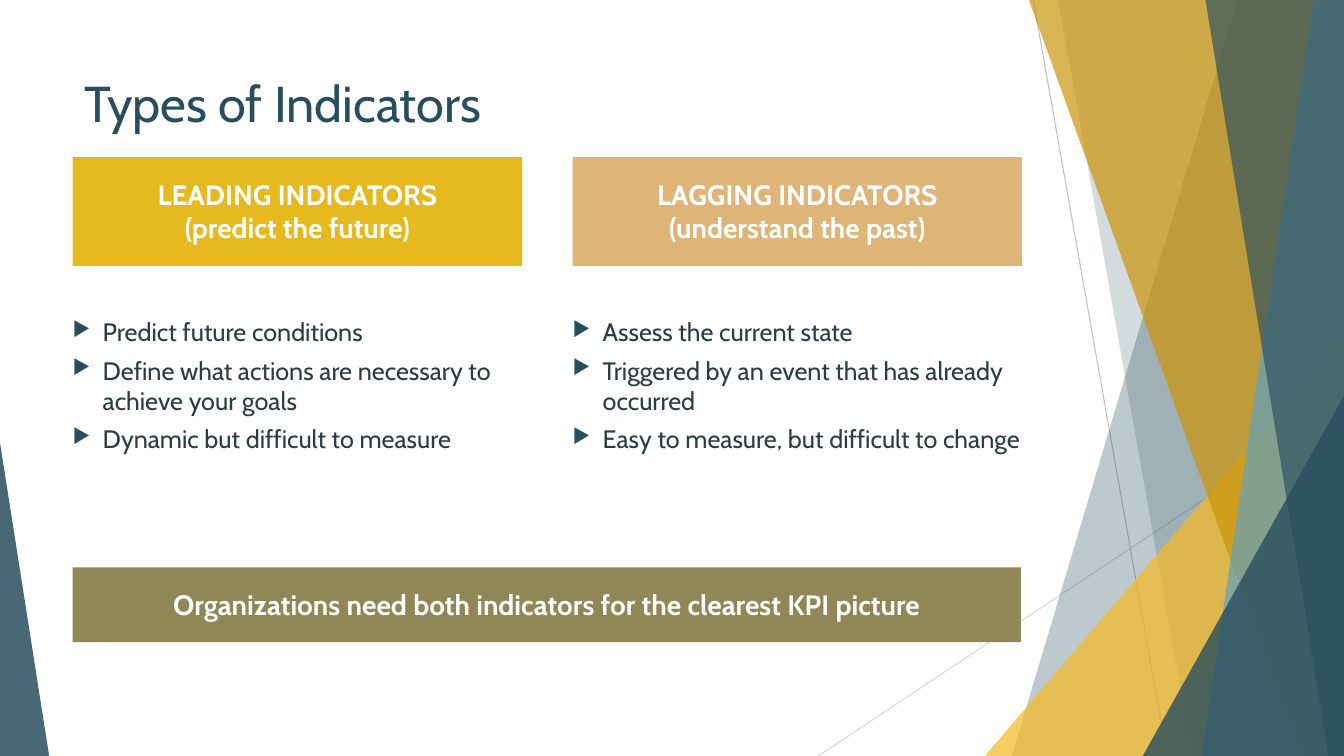
from dataclasses import dataclass
from typing import Any

import lxml.etree
import pptx
import pptx.dml.color
import pptx.enum.shapes
import pptx.enum.text
import pptx.oxml.ns
import pptx.util

Cm = pptx.util.Cm
Pt = pptx.util.Pt
RGB = pptx.dml.color.RGBColor
Kind = pptx.enum.shapes.MSO_SHAPE
Align = pptx.enum.text.PP_ALIGN
Anchor = pptx.enum.text.MSO_ANCHOR
qn = pptx.oxml.ns.qn

NAVY = RGB(0x28, 0x4E, 0x5E)
AMBER = RGB(0xF5, 0xBA, 0x26)
OCHRE = RGB(0xCB, 0x94, 0x09)
SKY = RGB(0x61, 0xA1, 0xBC)
GOLD = RGB(0xE6, 0xB9, 0x1E)
SAND = RGB(0xDE, 0xB4, 0x77)
OLIVE = RGB(0x91, 0x86, 0x55)
INK = RGB(0x2C, 0x3C, 0x43)
WHITE = RGB(0xFF, 0xFF, 0xFF)
GRAY = RGB(0xBF, 0xBF, 0xBF)
PALE = RGB(0xD9, 0xD9, 0xD9)

FONT = "Cabin"
WIDE, HIGH = 33.87, 19.05
LEFT = 1.83


@dataclass
class Line:
    start: tuple[float, float]
    end: tuple[float, float]
    color: RGB


@dataclass
class Panel:
    """A band that reaches from a slanted left edge to the slide's right edge."""
    top: float
    base: float
    color: RGB
    alpha: int


@dataclass
class Wedge:
    """A right triangle; tip is 0 for a left peak and 1 for a right peak."""
    x: float
    y: float
    wide: float
    tip: int
    color: RGB
    alpha: int


@dataclass
class Column:
    x: float
    color: RGB
    head: list[str]
    points: list[str]


LINES = [
    Line((26.04, 0), (29.41, HIGH), GRAY),
    Line((WIDE, 10.24), (20.62, HIGH), PALE),
]

# Back to front
FACETS = [
    Panel(31.19, 25.5, NAVY, 30),
    Panel(26.67, 30.05, NAVY, 20),
    Wedge(24.82, 8.46, 9.05, 1, AMBER, 72),
    Panel(25.93, 32.79, OCHRE, 70),
    Panel(33.1, 30.28, SKY, 70),
    Panel(30.38, 33.48, NAVY, 65),
    Wedge(28.8, 9.98, 5.07, 1, NAVY, 80),
    Wedge(0, 11.15, 1.24, 0, NAVY, 85),
]

COLUMNS = [
    Column(LEFT, GOLD, ["LEADING INDICATORS", "(predict the future)"], [
        "Predict future conditions",
        "Define what actions are necessary to achieve your goals",
        "Dynamic but difficult to measure",
    ]),
    Column(14.43, SAND, ["LAGGING INDICATORS", "(understand the past)"], [
        "Assess the current state",
        "Triggered by an event that has already occurred",
        "Easy to measure, but difficult to change",
    ]),
]


def paint(shape: Any, color: RGB, alpha: int = 100) -> None:
    shape.shadow.inherit = False
    shape.line.fill.background()
    shape.fill.solid()
    shape.fill.fore_color.rgb = color
    if alpha < 100:
        tint = shape.fill._xPr.find(".//" + qn("a:srgbClr"))
        lxml.etree.SubElement(tint, qn("a:alpha"), val=str(alpha * 1000))


def draw_line(shapes: Any, line: Line) -> None:
    link = shapes.add_connector(
        pptx.enum.shapes.MSO_CONNECTOR.STRAIGHT,
        *(Cm(v) for v in line.start + line.end))
    link.line.color.rgb = line.color
    link.line.width = Pt(0.75)
    lxml.etree.SubElement(link._element.spPr, qn("a:effectLst"))


def draw_panel(shapes: Any, panel: Panel) -> None:
    pen = shapes.build_freeform(Cm(panel.top), 0)
    ends = [(WIDE, 0), (WIDE, HIGH), (panel.base, HIGH)]
    pen.add_line_segments([(Cm(x), Cm(y)) for x, y in ends], close=True)
    paint(pen.convert_to_shape(), panel.color, panel.alpha)


def draw_wedge(shapes: Any, wedge: Wedge) -> None:
    shape = shapes.add_shape(Kind.ISOSCELES_TRIANGLE, Cm(wedge.x), Cm(wedge.y),
                             Cm(wedge.wide), Cm(HIGH - wedge.y))
    shape.adjustments[0] = wedge.tip
    paint(shape, wedge.color, wedge.alpha)


def add_mark(para: Any) -> None:
    props = para._p.get_or_add_pPr()
    props.set("marL", str(Cm(0.76)))
    props.set("indent", str(-Cm(0.76)))
    tint = lxml.etree.SubElement(props, qn("a:buClr"))
    lxml.etree.SubElement(tint, qn("a:srgbClr"), val=str(NAVY))
    lxml.etree.SubElement(props, qn("a:buSzPct"), val="80000")
    lxml.etree.SubElement(props, qn("a:buChar"), char="▶")


def write(shape: Any, text: list[str], *, size: int, color: RGB,
          bold: bool = False, align: Any = Align.LEFT, anchor: Any = Anchor.TOP,
          inset: float | None = None, after: int = 0, marks: bool = False) -> None:
    frame = shape.text_frame
    frame.word_wrap = True
    frame.vertical_anchor = anchor
    if inset is not None:
        frame.margin_left = frame.margin_right = Cm(inset)
        frame.margin_top = frame.margin_bottom = Cm(inset)
    for i, words in enumerate(text):
        para = frame.paragraphs[0] if i == 0 else frame.add_paragraph()
        if marks:
            add_mark(para)
        para.alignment = align
        para.space_after = Pt(after)
        run = para.add_run()
        run.text = words
        run.font.name = FONT
        run.font.size = Pt(size)
        run.font.bold = bold
        run.font.color.rgb = color


def draw_column(shapes: Any, col: Column) -> None:
    head = shapes.add_shape(Kind.RECTANGLE, Cm(col.x), Cm(3.96), Cm(11.33), Cm(2.74))
    paint(head, col.color)
    write(head, col.head, size=20, color=WHITE, bold=True,
          align=Align.CENTER, inset=0.51)
    body = shapes.add_textbox(Cm(col.x), Cm(7.97), Cm(11.35), Cm(6.3))
    write(body, col.points, size=18, color=INK, inset=0, after=6, marks=True)


def main() -> None:
    deck = pptx.Presentation()
    deck.slide_width, deck.slide_height = Cm(WIDE), Cm(HIGH)
    shapes = deck.slides.add_slide(deck.slide_layouts[6]).shapes

    # Backdrop
    for line in LINES:
        draw_line(shapes, line)
    for facet in FACETS:
        if isinstance(facet, Panel):
            draw_panel(shapes, facet)
        else:
            draw_wedge(shapes, facet)

    # Title
    title = shapes.add_textbox(Cm(1.88), Cm(1.7), Cm(23.88), Cm(2.2))
    write(title, ["Types of Indicators"], size=36, color=NAVY)

    # Two kinds of indicators
    for col in COLUMNS:
        draw_column(shapes, col)

    # Closing bar
    bar = shapes.add_shape(Kind.ROUNDED_RECTANGLE, Cm(LEFT), Cm(14.3), Cm(23.9), Cm(1.88))
    bar.adjustments[0] = 0
    paint(bar, OLIVE)
    write(bar, ["Organizations need both indicators for the clearest KPI picture"],
          size=20, color=WHITE, bold=True, align=Align.CENTER, anchor=Anchor.MIDDLE)

    deck.save("out.pptx")


if __name__ == "__main__":
    main()
